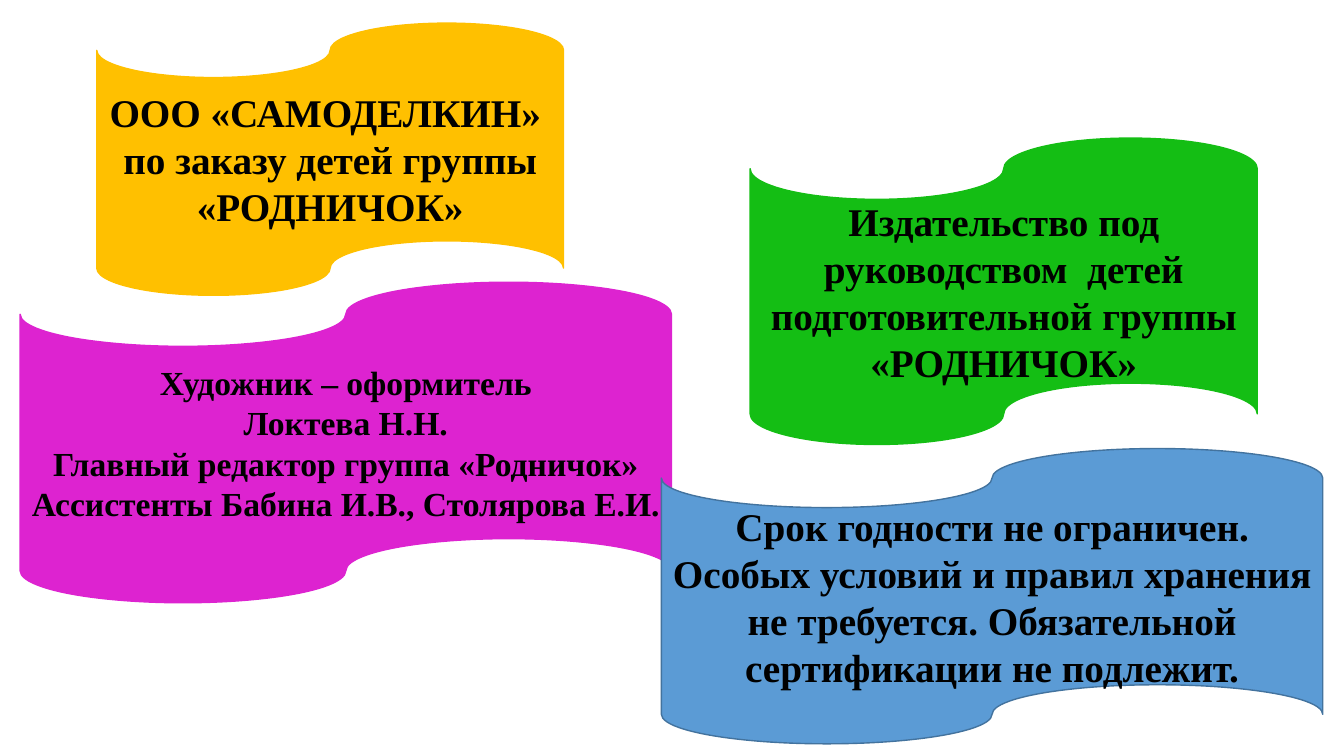
"""Build a slide of four coloured banners with publishing details."""
from pptx import Presentation
from pptx import util as u
from pptx.dml.color import RGBColor
from pptx.enum import shapes, text

BLACK = RGBColor(0x00, 0x00, 0x00)
AMBER = RGBColor(0xFF, 0xC0, 0x00)
GREEN = RGBColor(0x14, 0xBE, 0x14)
MAGENTA = RGBColor(0xDD, 0x23, 0xD0)
BLUE = RGBColor(0x5B, 0x9B, 0xD5)
DARK_BLUE = RGBColor(0x43, 0x73, 0x9E)

BANNERS = [
    ((0.96, 0.23, 4.63, 2.7), AMBER, AMBER, 28,
     ["ООО «САМОДЕЛКИН» ", "по заказу детей группы «РОДНИЧОК»"]),
    ((7.44, 1.37, 5.03, 3.04), GREEN, GREEN, 28,
     ["Издательство под руководством  детей подготовительной группы «РОДНИЧОК»"]),
    ((0.2, 2.8, 6.46, 3.18), MAGENTA, MAGENTA, 24,
     ["Художник – оформитель", "Локтева Н.Н.",
      "Главный редактор группа «Родничок»",
      "Ассистенты Бабина И.В., Столярова Е.И."]),
    ((6.56, 4.45, 6.56, 2.93), BLUE, DARK_BLUE, 28,
     ["Срок годности не ограничен. Особых условий и правил хранения "
      "не требуется. Обязательной сертификации не подлежит."]),
]

presentation = Presentation()
presentation.slide_width = u.Inches(13.33)
presentation.slide_height = u.Inches(7.5)
slide = presentation.slides.add_slide(presentation.slide_layouts[6])

for place, fill, outline, size, lines in BANNERS:
    banner = slide.shapes.add_shape(
        shapes.MSO_SHAPE.FLOWCHART_PUNCHED_TAPE, *map(u.Inches, place))
    banner.shadow.inherit = False
    banner.fill.solid()
    banner.fill.fore_color.rgb = fill
    banner.line.color.rgb = outline
    banner.line.width = u.Pt(1)
    wording = banner.text_frame
    wording.word_wrap = True
    wording.vertical_anchor = text.MSO_ANCHOR.MIDDLE
    for number, line in enumerate(lines):
        paragraph = wording.add_paragraph() if number else wording.paragraphs[0]
        paragraph.alignment = text.PP_ALIGN.CENTER
        run = paragraph.add_run()
        run.text = line
        run.font.name = "Times New Roman"
        run.font.size = u.Pt(size)
        run.font.bold = True
        run.font.color.rgb = BLACK

presentation.save("out.pptx")
